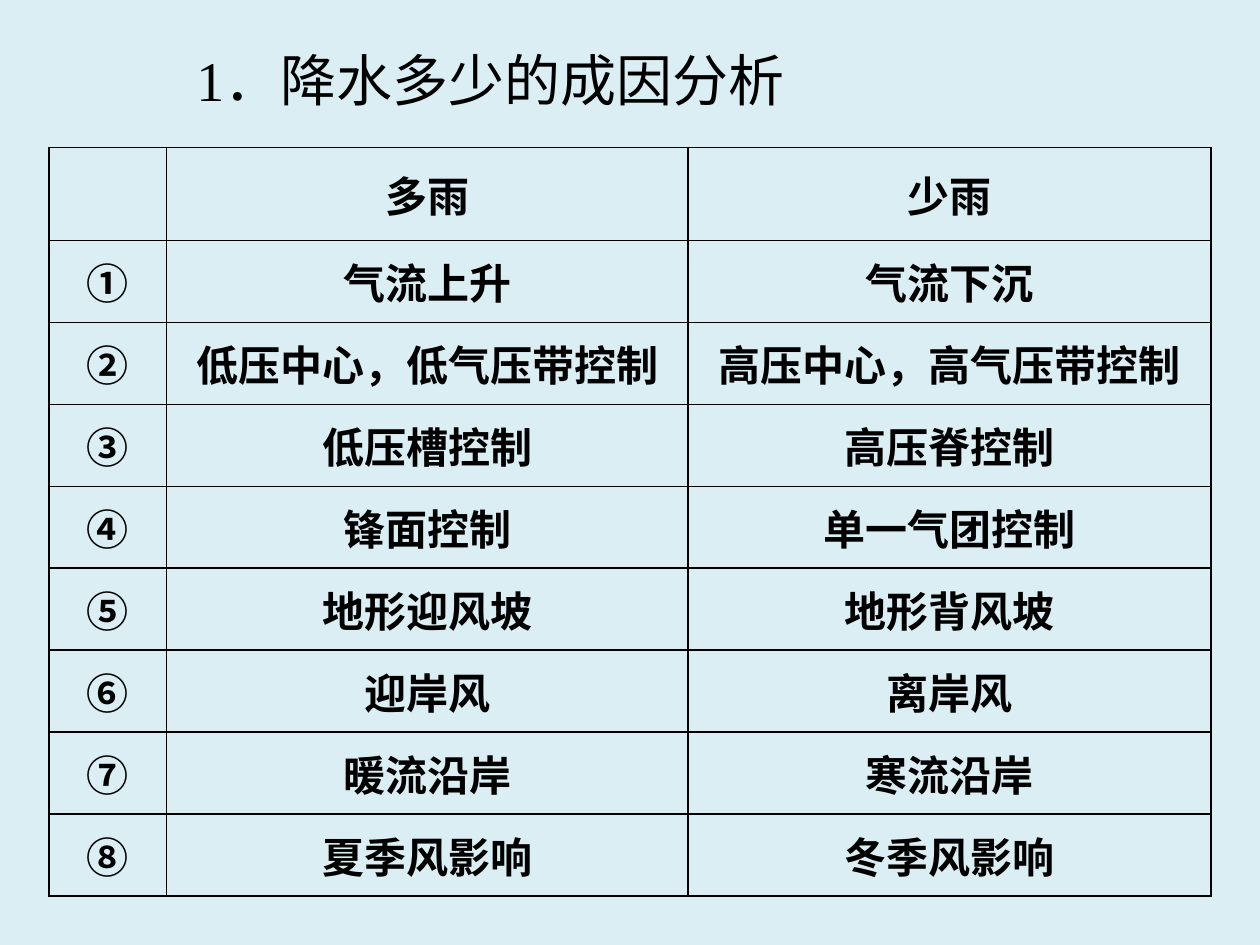
from lxml.etree import SubElement
from pptx import Presentation
from pptx.dml.color import RGBColor
from pptx.enum.text import MSO_ANCHOR, MSO_AUTO_SIZE, PP_ALIGN
from pptx.oxml.ns import qn
from pptx.util import Inches, Pt

BLACK = RGBColor(0x00, 0x00, 0x00)
PALE = RGBColor(0xDB, 0xEE, 0xF4)
SERIF = "Times New Roman"
SANS = "Noto Sans CJK SC"

COLS = [0.93, 4.14, 4.15]
HEAD, ROW = 0.74, 0.65
ROWS = [
    ("", "多雨", "少雨"),
    ("①", "气流上升", "气流下沉"),
    ("②", "低压中心，低气压带控制", "高压中心，高气压带控制"),
    ("③", "低压槽控制", "高压脊控制"),
    ("④", "锋面控制", "单一气团控制"),
    ("⑤", "地形迎风坡", "地形背风坡"),
    ("⑥", "迎岸风", "离岸风"),
    ("⑦", "暖流沿岸", "寒流沿岸"),
    ("⑧", "夏季风影响", "冬季风影响"),
]


def add_run(para, text, size, face, bold=False):
    run = para.add_run()
    run.text = text
    font = run.font
    font.size, font.name, font.bold = Pt(size), face, bold
    font.color.rgb = BLACK
    SubElement(run._r.get_or_add_rPr(), qn("a:ea"), typeface=SANS)


def add_title(slide, text):
    box = slide.shapes.add_textbox(
        Inches(0.78), Inches(0.31), Inches(5.7), Inches(0.64))
    frame = box.text_frame
    frame.word_wrap = True
    frame.auto_size = MSO_AUTO_SIZE.SHAPE_TO_FIT_TEXT
    para = frame.paragraphs[0]
    para.space_before = Pt(6.4)
    # First-line indent
    para._p.get_or_add_pPr().set("indent", str(Inches(0.68)))
    add_run(para, text, 32, SERIF)


def add_edges(cell):
    props = cell._tc.get_or_add_tcPr()
    for side in ("lnL", "lnR", "lnT", "lnB"):
        line = SubElement(props, qn(f"a:{side}"), w=str(Pt(1)))
        fill = SubElement(line, qn("a:solidFill"))
        SubElement(fill, qn("a:srgbClr"), val=str(BLACK))


def fill_cell(cell, text, face):
    add_edges(cell)
    cell.fill.background()
    cell.vertical_anchor = MSO_ANCHOR.MIDDLE
    if text:
        para = cell.text_frame.paragraphs[0]
        para.alignment = PP_ALIGN.CENTER
        add_run(para, text, 24, face, True)


def add_grid(slide):
    high = HEAD + ROW * (len(ROWS) - 1)
    table = slide.shapes.add_table(
        len(ROWS), len(COLS), Inches(0.39), Inches(1.17),
        Inches(sum(COLS)), Inches(high)).table
    table.first_row = table.horz_banding = False
    for col, wide in zip(table.columns, COLS):
        col.width = Inches(wide)
    for i, texts in enumerate(ROWS):
        table.rows[i].height = Inches(ROW if i else HEAD)
        for j, text in enumerate(texts):
            fill_cell(table.cell(i, j), text, SERIF if j else SANS)


def main():
    deck = Presentation()
    deck.slide_width, deck.slide_height = Inches(10), Inches(7.5)
    slide = deck.slides.add_slide(deck.slide_layouts[6])

    # Background
    back = slide.background.fill
    back.solid()
    back.fore_color.rgb = PALE

    # Heading and table of causes
    add_title(slide, "1．降水多少的成因分析")
    add_grid(slide)
    deck.save("out.pptx")


if __name__ == "__main__":
    main()
